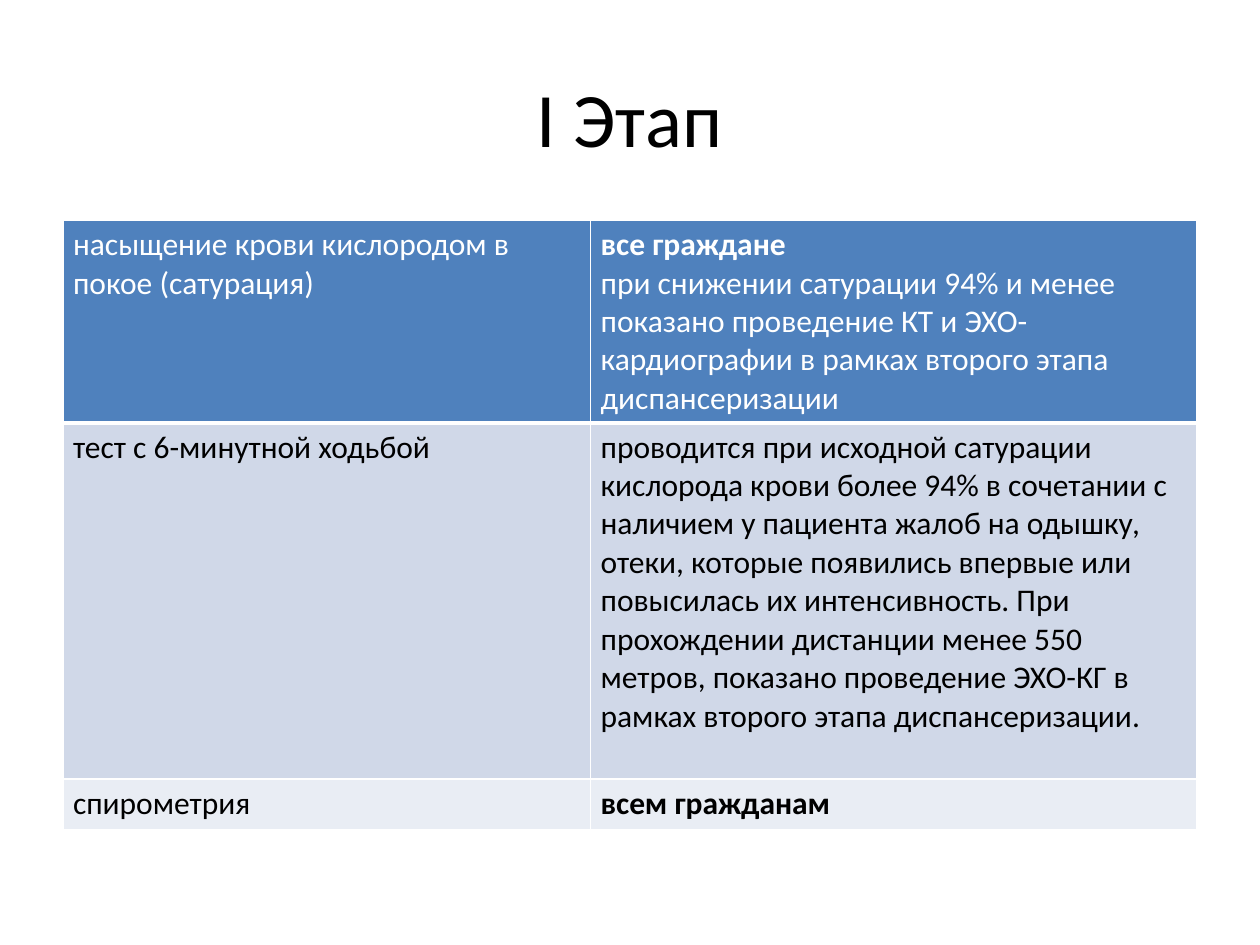
from dataclasses import dataclass

from lxml import etree
from pptx import Presentation
from pptx import util as u
from pptx.dml.color import RGBColor
from pptx.enum import text
from pptx.oxml import ns


@dataclass(frozen=True)
class Theme:
    font: str = "Calibri"
    title_size: int = 44
    body_size: int = 18
    white: str = "FFFFFF"
    black: str = "000000"
    header: str = "4F81BD"
    bands: tuple = ("D0D8E8", "E9EDF4")
    line: int = 1
    header_line: int = 3


class SlideBuilder:
    """Draws styled elements on the current slide."""

    def __init__(self, slide, theme):
        self.slide = slide
        self.theme = theme

    def style(self, font, size, color):
        font.name = self.theme.font
        font.size = u.Pt(size)
        font.color.rgb = RGBColor.from_string(color)

    def title(self, wording, left, top, width, height):
        shape = self.slide.shapes.add_textbox(*map(u.Pt, (left, top, width, height)))
        frame = shape.text_frame
        frame.word_wrap = True
        frame.vertical_anchor = text.MSO_ANCHOR.MIDDLE
        paragraph = frame.paragraphs[0]
        paragraph.text = wording
        paragraph.alignment = text.PP_ALIGN.CENTER
        self.style(paragraph.font, self.theme.title_size, self.theme.black)

    def borders(self, cell, widths):
        properties = cell._tc.get_or_add_tcPr()
        for position, (side, width) in enumerate(widths.items()):
            line = etree.Element(ns.qn(f"a:ln{side}"), w=str(u.Pt(width)))
            fill = etree.SubElement(line, ns.qn("a:solidFill"))
            etree.SubElement(fill, ns.qn("a:srgbClr"), val=self.theme.white)
            properties.insert(position, line)

    def cell(self, cell, lines, fill, color, top_line, bottom_line):
        cell.margin_left = cell.margin_right = u.Pt(5.75)
        cell.margin_top = cell.margin_bottom = u.Pt(2.9)
        cell.fill.solid()
        cell.fill.fore_color.rgb = RGBColor.from_string(fill)
        paragraph = cell.text_frame.paragraphs[0]
        self.style(paragraph.font, self.theme.body_size, color)
        for index, (wording, bold) in enumerate(lines):
            if index:
                paragraph.add_line_break()
            run = paragraph.add_run()
            run.text = wording
            run.font.bold = bold
            self.style(run.font, self.theme.body_size, color)
        side = self.theme.line
        self.borders(cell, {"L": side, "R": side, "T": top_line, "B": bottom_line})

    def table(self, rows, left, top, widths, heights):
        theme = self.theme
        frame = self.slide.shapes.add_table(
            len(rows), len(widths),
            *map(u.Pt, (left, top, sum(widths), sum(heights))))
        table = frame.table
        for column, width in zip(table.columns, widths):
            column.width = u.Pt(width)
        for index, (row, height) in enumerate(zip(rows, heights)):
            table.rows[index].height = u.Pt(height)
            fill = theme.bands[(index - 1) % 2] if index else theme.header
            color = theme.black if index else theme.white
            top_line = theme.header_line if index == 1 else theme.line
            bottom_line = theme.line if index else theme.header_line
            for column, lines in enumerate(row):
                self.cell(table.cell(index, column), lines, fill, color,
                          top_line, bottom_line)


EXAMINATIONS = [
    ([("насыщение крови кислородом в покое (сатурация)", False)],
     [("все граждане", True),
      ("при снижении сатурации 94% и менее показано проведение КТ и "
       "ЭХО-кардиографии в рамках второго этапа диспансеризации", False)]),
    ([("тест с 6-минутной ходьбой", False)],
     [("проводится при исходной сатурации кислорода крови более 94% в сочетании "
       "с наличием у пациента жалоб на одышку, отеки, которые появились впервые "
       "или повысилась их интенсивность. При прохождении дистанции менее 550 "
       "метров, показано проведение ЭХО-КГ в рамках второго этапа "
       "диспансеризации.", False)]),
    ([("спирометрия", False)], [("всем гражданам", True)]),
]


def main():
    presentation = Presentation()
    presentation.slide_width = u.Pt(720)
    presentation.slide_height = u.Pt(540)
    slide = presentation.slides.add_slide(presentation.slide_layouts[6])
    builder = SlideBuilder(slide, Theme())
    builder.title("I Этап", 36, 21.6, 648, 90)
    builder.table(EXAMINATIONS, 36, 126, (301.5, 346.5), (115.7, 203.5, 29.2))
    presentation.save("out.pptx")


if __name__ == "__main__":
    main()
